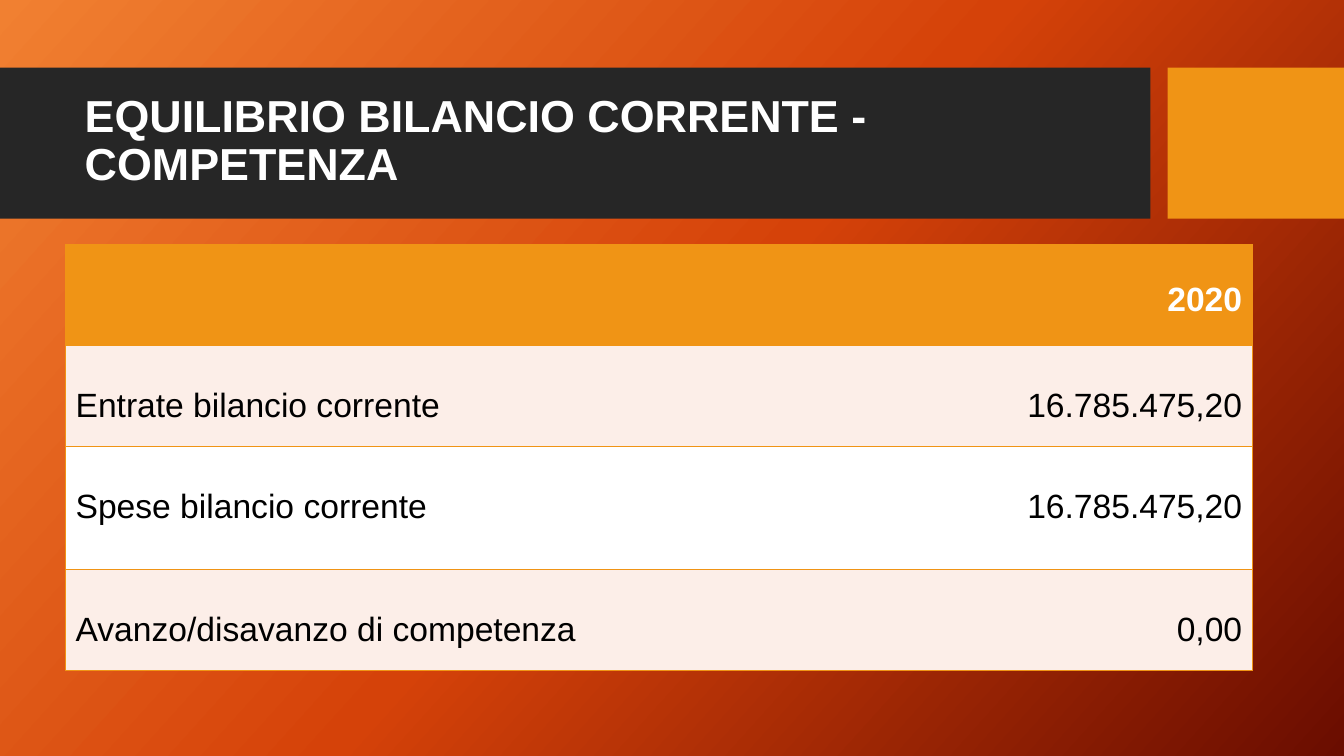
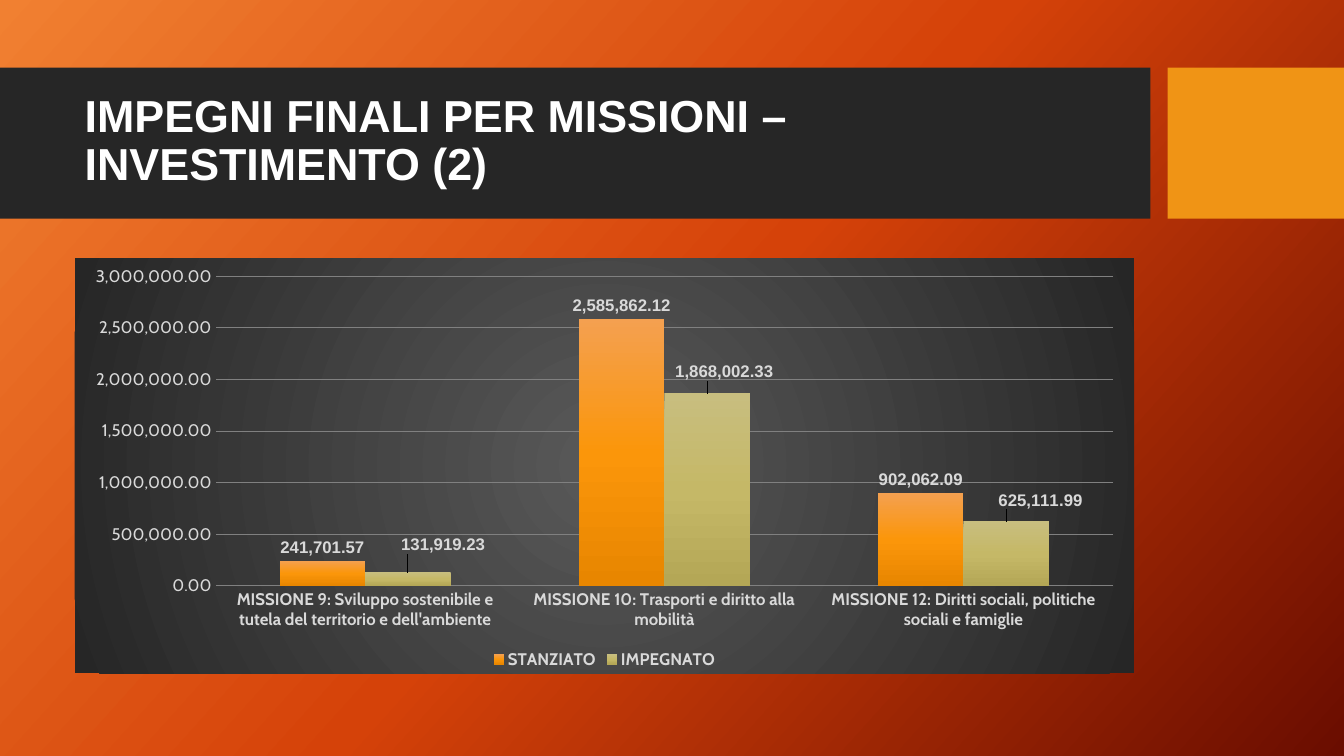
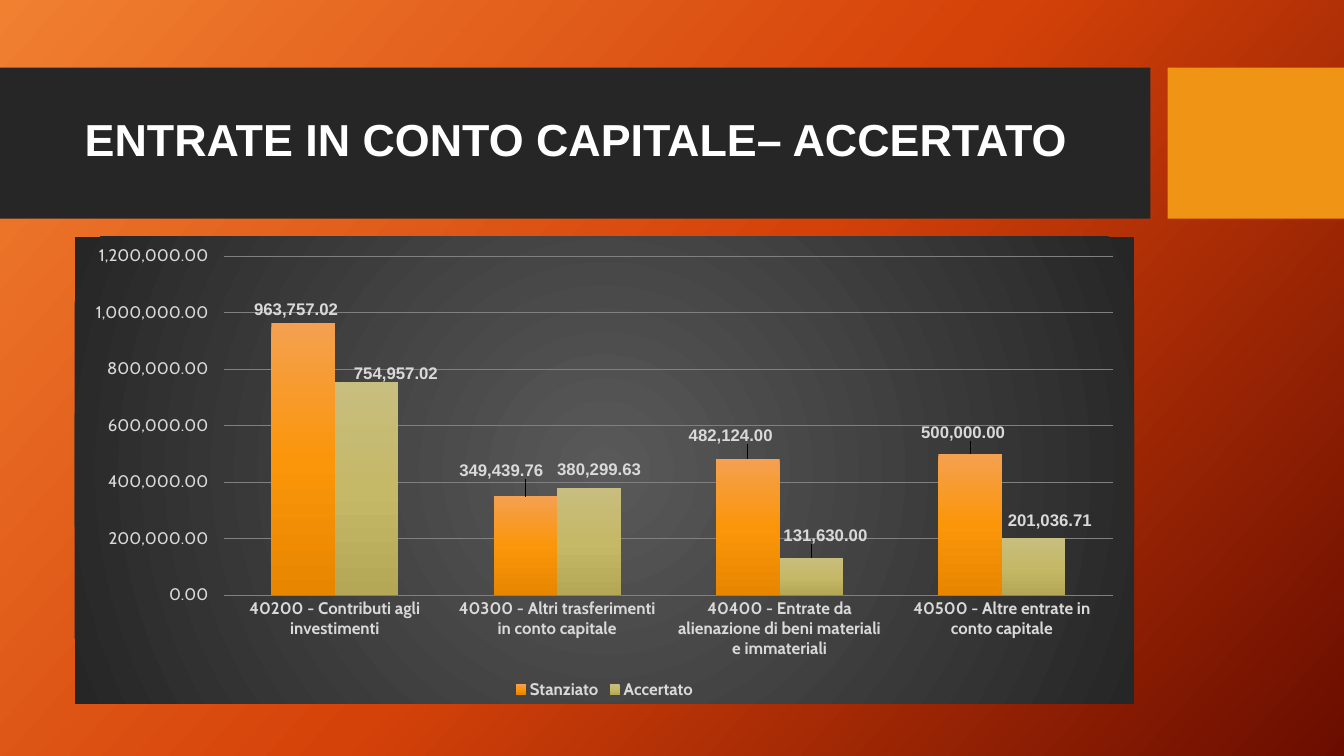
from lxml import etree
from pptx import Presentation
from pptx.chart.data import CategoryChartData
from pptx.dml.color import RGBColor
from pptx.enum.chart import XL_CHART_TYPE, XL_LABEL_POSITION, XL_LEGEND_POSITION, XL_TICK_MARK
from pptx.enum.shapes import MSO_SHAPE
from pptx.enum.text import MSO_ANCHOR, MSO_AUTO_SIZE, PP_ALIGN
from pptx.oxml import parse_xml
from pptx.oxml.ns import nsdecls, qn
from pptx.util import Inches, Pt

WHITE = RGBColor(0xFF, 0xFF, 0xFF)
BLACK = RGBColor(0x00, 0x00, 0x00)
DARK = RGBColor(0x26, 0x26, 0x26)
GRAPHITE = RGBColor(0x59, 0x59, 0x59)
GREY = RGBColor(0x80, 0x80, 0x80)
SILVER = RGBColor(0xD9, 0xD9, 0xD9)
AMBER = RGBColor(0xF0, 0x94, 0x15)
BLUSH = RGBColor(0xFC, 0xEE, 0xE8)

BACKDROP = (RGBColor(0xF1, 0x80, 0x31), RGBColor(0xD5, 0x42, 0x09), RGBColor(0x6A, 0x0D, 0x00))
ORANGE_BARS = (RGBColor(0xF4, 0xA0, 0x50), RGBColor(0xFB, 0x96, 0x0A), RGBColor(0xE8, 0x86, 0x00))
OLIVE_BARS = (RGBColor(0xC8, 0xBE, 0x7F), RGBColor(0xC5, 0xB8, 0x67), RGBColor(0xB4, 0xA7, 0x56))

HEAD_FONT, CHART_FONT = "Arial", "Cabin"
NO_TABLE_STYLE = "{2D5ABB26-0587-4C30-8999-92F81FD0307C}"


def gradient(colors, angle=None):
    """Evenly spaced gradient: linear at an angle, or circular without one."""
    step = 100000 // (len(colors) - 1)
    stops = "".join(f'<a:gs pos="{i * step}"><a:srgbClr val="{c}"/></a:gs>'
                    for i, c in enumerate(colors))
    if angle is None:
        shade = ('<a:path path="circle"><a:fillToRect l="50000" t="50000" '
                 'r="50000" b="50000"/></a:path>')
    else:
        shade = f'<a:lin ang="{angle * 60000}" scaled="0"/>'
    return parse_xml(f'<a:gradFill {nsdecls("a")} rotWithShape="1">'
                     f'<a:gsLst>{stops}</a:gsLst>{shade}</a:gradFill>')


def fill_gradient(fill, element, colors, angle):
    fill.solid()
    solid = element.find(".//" + qn("a:solidFill"))
    solid.getparent().replace(solid, gradient(colors, angle))


def set_font(font, size, color, bold=False, name=HEAD_FONT):
    font.name, font.size, font.bold = name, Pt(size), bold
    font.color.rgb = color


class Deck:
    def __init__(self):
        self.prs = Presentation()
        self.prs.slide_width, self.prs.slide_height = Inches(13.33), Inches(7.5)
        master = self.prs.slide_master
        fill_gradient(master.background.fill, master.element, BACKDROP, 42)
        self.s = None

    def slide(self, title):
        self.s = self.prs.slides.add_slide(self.prs.slide_layouts[5])
        self.band(0, 11.41, DARK)
        self.band(11.58, 1.75, AMBER)
        self.title(title)

    def band(self, x, w, color):
        sp = self.s.shapes.add_shape(MSO_SHAPE.RECTANGLE, Inches(x), Inches(0.67),
                                     Inches(w), Inches(1.5))
        sp.shadow.inherit = False
        sp.fill.solid()
        sp.fill.fore_color.rgb = color
        sp.line.fill.background()

    def title(self, text):
        sp = self.s.shapes.title
        sp.left, sp.top, sp.width, sp.height = map(Inches, (0.74, 0.82, 10.51, 1.18))
        sp._element.getparent().append(sp._element)  # in front of the bands
        tf = sp.text_frame
        tf.text = text
        tf.word_wrap, tf.auto_size = True, MSO_AUTO_SIZE.NONE
        tf.vertical_anchor = MSO_ANCHOR.MIDDLE
        p = tf.paragraphs[0]
        p.alignment, p.line_spacing = PP_ALIGN.LEFT, 0.9
        set_font(p.font, 32, WHITE, True)

    def table(self, x, y, widths, heights, rows):
        table = self.s.shapes.add_table(
            len(rows), len(widths), Inches(x), Inches(y),
            Inches(sum(widths)), Inches(sum(heights))).table
        table._tbl.tblPr.find(qn("a:tableStyleId")).text = NO_TABLE_STYLE
        for column, w in zip(table.columns, widths):
            column.width = Inches(w)
        for i, (h, row) in enumerate(zip(heights, rows)):
            table.rows[i].height = Inches(h)
            for j, text in enumerate(row):
                self.cell(table.cell(i, j), text, i, j)

    def cell(self, cell, text, i, j):
        header = i == 0
        # Borders come before the fill in the cell properties
        tc_pr = cell._tc.get_or_add_tcPr()
        for side in ("R" if j else "L", "T", "B"):
            ln = etree.SubElement(tc_pr, qn(f"a:ln{side}"), w=str(Pt(1)))
            solid = etree.SubElement(ln, qn("a:solidFill"))
            etree.SubElement(solid, qn("a:srgbClr"), val=str(AMBER))
        cell.fill.solid()
        cell.fill.fore_color.rgb = AMBER if header else (WHITE, BLUSH)[i % 2]
        cell.margin_top = Inches(0.36 if header else 0.41)
        p = cell.text_frame.paragraphs[0]
        p.alignment = PP_ALIGN.RIGHT if j else PP_ALIGN.LEFT
        set_font(p.font, 24, WHITE if header else BLACK, header)
        if text:
            p.add_run().text = text

    def chart(self, y, h, categories, series, number_format):
        """series: (name, values, {point: label offset in inches})."""
        x, w = 0.74, 10.51
        data = CategoryChartData(number_format=number_format)
        data.categories = categories
        for name, values, _ in series:
            data.add_series(name, values)
        chart = self.s.shapes.add_chart(XL_CHART_TYPE.COLUMN_CLUSTERED, Inches(x), Inches(y),
                                        Inches(w), Inches(h), data).chart
        chart.has_title = False
        set_font(chart.font, 10, WHITE, name=CHART_FONT)
        self.chart_background(chart)

        # Legend and axes
        chart.has_legend = True
        chart.legend.position = XL_LEGEND_POSITION.BOTTOM
        chart.legend.include_in_layout = False
        set_font(chart.legend.font, 12, SILVER, True, CHART_FONT)
        for axis, bold in ((chart.category_axis, True), (chart.value_axis, False)):
            axis.major_tick_mark = axis.minor_tick_mark = XL_TICK_MARK.NONE
            axis.format.line.fill.background()
            set_font(axis.tick_labels.font, 12, SILVER, bold, CHART_FONT)
        grid = chart.value_axis.major_gridlines.format.line
        grid.color.rgb, grid.width = GREY, Pt(0.75)
        labels = chart.value_axis.tick_labels
        labels.number_format, labels.number_format_is_linked = number_format, False

        # Bars and their labels
        plot = chart.plots[0]
        plot.gap_width, plot.overlap, plot.vary_by_categories = 150, 0, False
        for ser, (_, _, offsets), colors in zip(plot.series, series, (ORANGE_BARS, OLIVE_BARS)):
            fill_gradient(ser.format.fill, ser._element, colors, 90)
            labels = ser.data_labels
            labels.show_value, labels.position = True, XL_LABEL_POSITION.OUTSIDE_END
            labels.number_format, labels.number_format_is_linked = number_format, False
            set_font(labels.font, 12, SILVER, True)
            for i, (dx, dy) in offsets.items():
                self.move_label(ser.points[i].data_label, dx / w, dy / h, number_format)

    def chart_background(self, chart):
        sp_pr = parse_xml(f'<c:spPr {nsdecls("c", "a")}><a:ln><a:noFill/></a:ln></c:spPr>')
        sp_pr.insert(0, gradient((GRAPHITE, DARK)))
        chart._chartSpace.find(qn("c:txPr")).addprevious(sp_pr)

    def move_label(self, label, dx, dy, number_format):
        set_font(label.font, 12, SILVER, True)
        label.position = XL_LABEL_POSITION.OUTSIDE_END
        element = label._dLbl
        element.insert(1, parse_xml(
            f'<c:layout {nsdecls("c")}><c:manualLayout><c:x val="{dx:.4f}"/>'
            f'<c:y val="{dy:.4f}"/></c:manualLayout></c:layout>'))
        num_fmt = parse_xml(f'<c:numFmt {nsdecls("c")} formatCode="" sourceLinked="0"/>')
        num_fmt.set("formatCode", number_format)
        element.insert(2, num_fmt)


def main():
    deck = Deck()

    # Current budget balance
    deck.slide("EQUILIBRIO BILANCIO CORRENTE - COMPETENZA")
    deck.table(0.65, 2.43, (6.89, 4.88), (1, 1, 1.22, 1), (
        ("", "2020"),
        ("Entrate bilancio corrente", "16.785.475,20"),
        ("Spese bilancio corrente", "16.785.475,20"),
        ("Avanzo/disavanzo di competenza", "0,00")))

    # Investment commitments
    deck.slide("IMPEGNI FINALI PER MISSIONI – INVESTIMENTO (2)")
    deck.chart(2.56, 4.12, (
        "MISSIONE 9: Sviluppo sostenibile e tutela del territorio e dell'ambiente",
        "MISSIONE 10: Trasporti e diritto alla mobilità",
        "MISSIONE 12: Diritti sociali, politiche sociali e famiglie"), (
        ("STANZIATO", (241701.57, 2585862.12, 902062.09), {}),
        ("IMPEGNATO", (131919.23, 1868002.33, 625111.99),
         {0: (0.35, -0.14), 1: (0.17, -0.08), 2: (0.34, -0.08)})), "#,##0.00")

    # Capital revenue
    deck.slide("ENTRATE IN CONTO CAPITALE– ACCERTATO")
    deck.chart(2.35, 4.63, (
        "40200 - Contributi agli investimenti",
        "40300 - Altri trasferimenti in conto capitale",
        "40400 - Entrate da alienazione di beni materiali e immateriali",
        "40500 - Altre entrate in conto capitale"), (
        ("Stanziato", (963757.02, 349439.76, 482124, 500000),
         {1: (-0.17, -0.13), 2: (-0.1, -0.1), 3: (0, -0.08)}),
        ("Accertato", (754957.02, 380299.63, 131630, 201036.71),
         {0: (0.36, 0.05), 1: (0.17, -0.05), 2: (0.21, -0.09), 3: (0.23, -0.05)})),
        "#,##0.00\\ _€")

    deck.prs.save("out.pptx")


if __name__ == "__main__":
    main()
